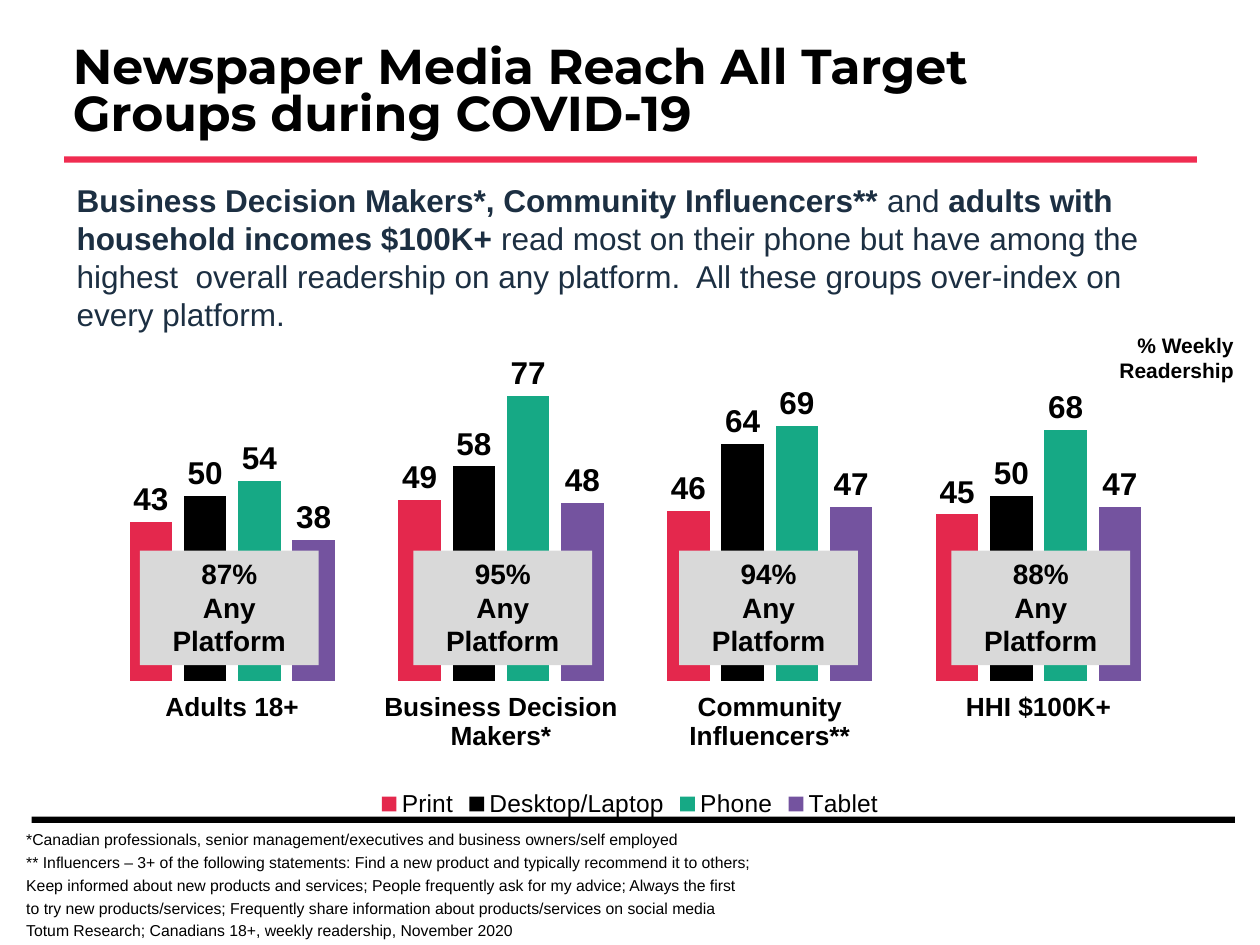
from dataclasses import dataclass

from lxml import etree
from pptx import Presentation
from pptx import util as u
from pptx.chart import data as chart_data
from pptx.dml import color
from pptx.enum import chart as charts
from pptx.enum import shapes, text
from pptx.oxml import ns


@dataclass(frozen=True)
class Theme:
    """Colours, fonts and type sizes of the slide."""
    black: str = "000000"
    navy: str = "1C2F42"
    red: str = "F02C51"
    grey: str = "D9D9D9"
    heading: str = "Montserrat"
    body: str = "Arial"
    title: int = 28
    lead: int = 18
    badge: int = 16
    category: int = 15
    legend: int = 14
    unit: int = 12
    note: int = 9


@dataclass(frozen=True)
class Area:
    """A rectangle in points."""
    left: float
    top: float
    width: float
    height: float

    def lengths(self) -> list:
        """Give the rectangle as slide lengths."""
        return [u.Pt(v) for v in (self.left, self.top, self.width, self.height)]


@dataclass(frozen=True)
class Series:
    """One platform with its readership in each group."""
    name: str
    fill: str
    values: tuple


@dataclass(frozen=True)
class Badge:
    """Reach on any platform, placed over one group."""
    left: float
    reach: str


THEME = Theme()
GROUPS = ("Adults 18+", "Business Decision Makers*", "Community Influencers**", "HHI $100K+")
PLATFORMS = (
    Series("Print", "E4284D", (43, 49, 46, 45)),
    Series("Desktop/Laptop", THEME.black, (50, 58, 64, 50)),
    Series("Phone", "16A985", (54, 77, 69, 68)),
    Series("Tablet", "74539F", (38, 48, 47, 47)),
)
BADGES = (Badge(79.9, "87%"), Badge(236.2, "95%"), Badge(388.1, "94%"), Badge(543.6, "88%"))
RULES = ((Area(18, 466.6, 687.6, 3.6), THEME.black), (Area(36.7, 89.3, 647.3, 3.6), THEME.red))
PLOT = {"xMode": "edge", "yMode": "edge", "x": 0.01, "y": 0.169, "w": 0.99, "h": 0.582}
LEAD = (
    ("Business Decision Makers*, Community Influencers** ", True),
    ("and", False),
    (" adults with household incomes $100K+ ", True),
    ("read most on their phone but have among the highest  overall readership on any platform."
     "  All these groups over-index on every platform.", False),
)
NOTES = (
    "*Canadian professionals, senior management/executives and business owners/self employed",
    "** Influencers – 3+ of the following statements: Find a new product and typically recommend "
    "it to others; Keep informed about new products and services; People frequently ask for my "
    "advice; Always the first to try new products/services; Frequently share information about "
    "products/services on social media",
    "Totum Research; Canadians 18+, weekly readership, November 2020",
)


def style(font, size: int, bold: bool = False, ink: str = THEME.black, face: str = THEME.body) -> None:
    """Format a font."""
    font.size, font.bold, font.name = u.Pt(size), bold, face
    font.color.rgb = color.RGBColor.from_string(ink)


def style_frame(frame, size: int, bold: bool = False, align=text.PP_ALIGN.LEFT) -> None:
    """Format every run of a wrapped, top-anchored frame."""
    frame.word_wrap = True
    frame.auto_size = text.MSO_AUTO_SIZE.SHAPE_TO_FIT_TEXT
    frame.vertical_anchor = text.MSO_ANCHOR.TOP
    for para in frame.paragraphs:
        para.alignment = align
        for span in para.runs:
            style(span.font, size, bold)


def add_block(page, area: Area, fill: str):
    """Draw a plain filled rectangle."""
    box = page.shapes.add_shape(shapes.MSO_SHAPE.RECTANGLE, *area.lengths())
    box.shadow.inherit = False
    box.fill.solid()
    box.fill.fore_color.rgb = color.RGBColor.from_string(fill)
    box.line.fill.background()
    return box


def add_title(page, area: Area, words: str) -> None:
    """Place and format the title placeholder."""
    box = page.shapes.title
    box.left, box.top, box.width, box.height = area.lengths()
    frame = box.text_frame
    frame.text = words
    frame.word_wrap = True
    frame.vertical_anchor = text.MSO_ANCHOR.MIDDLE
    frame.margin_left = frame.margin_right = u.Pt(5)
    frame.margin_top = frame.margin_bottom = u.Pt(2.9)
    para = frame.paragraphs[0]
    para.alignment, para.line_spacing = text.PP_ALIGN.LEFT, 0.8
    style(para.runs[0].font, THEME.title, True, face=THEME.heading)


def add_readership_chart(page, area: Area) -> None:
    """Draw the clustered columns of weekly readership."""
    table = chart_data.CategoryChartData()
    table.categories = GROUPS
    for item in PLATFORMS:
        table.add_series(item.name, item.values)
    kind = charts.XL_CHART_TYPE.COLUMN_CLUSTERED
    chart = page.shapes.add_chart(kind, *area.lengths(), table).chart
    style(chart.font, THEME.lead)
    chart.has_title = False
    chart.has_legend = True
    chart.legend.position = charts.XL_LEGEND_POSITION.BOTTOM
    chart.legend.include_in_layout = False
    style(chart.legend.font, THEME.legend)
    style(chart.category_axis.tick_labels.font, THEME.category, True)
    chart.category_axis.format.line.fill.background()
    axis = chart.value_axis
    axis.minimum_scale, axis.maximum_scale = 0, 90
    axis.has_major_gridlines = axis.visible = False
    plot = chart.plots[0]
    plot.gap_width, plot.overlap, plot.vary_by_categories = 150, -28, False
    for series, item in zip(plot.series, PLATFORMS):
        series.format.fill.solid()
        series.format.fill.fore_color.rgb = color.RGBColor.from_string(item.fill)
        labels = series.data_labels
        labels.show_value = True
        labels.position = charts.XL_LABEL_POSITION.OUTSIDE_END
        style(labels.font, THEME.lead, True)
    set_plot_layout(chart)


def set_plot_layout(chart) -> None:
    """Fix the inner plot area as fractions of the chart."""
    plot_area = chart.element.find(".//" + ns.qn("c:plotArea"))
    for old in plot_area.findall(ns.qn("c:layout")):
        plot_area.remove(old)
    layout = etree.Element(ns.qn("c:layout"))
    plot_area.insert(0, layout)
    manual = etree.SubElement(layout, ns.qn("c:manualLayout"))
    for tag, value in {"layoutTarget": "inner", **PLOT}.items():
        etree.SubElement(manual, ns.qn(f"c:{tag}")).set("val", str(value))


def add_lead(page, area: Area) -> None:
    """Write the lead sentence with its bold groups."""
    frame = page.shapes.add_textbox(*area.lengths()).text_frame
    for words, bold in LEAD:
        span = frame.paragraphs[0].add_run()
        span.text = words
    style_frame(frame, THEME.lead)
    for span, (words, bold) in zip(frame.paragraphs[0].runs, LEAD):
        style(span.font, THEME.lead, bold, THEME.navy)


def add_notes(page, area: Area) -> None:
    """Write the footnotes."""
    frame = page.shapes.add_textbox(*area.lengths()).text_frame
    frame.text = "\n".join(NOTES)
    style_frame(frame, THEME.note)
    for para in frame.paragraphs[1:]:
        para.line_spacing = 1.2


def main() -> None:
    """Build and save the deck."""
    deck = Presentation()
    deck.slide_width, deck.slide_height = u.Pt(720), u.Pt(540)
    page = deck.slides.add_slide(deck.slide_layouts[5])
    for area, fill in RULES:
        add_block(page, area, fill)
    add_title(page, Area(36.7, 1.4, 620.6, 104.4),
              "Newspaper Media Reach All Target Groups during COVID-19")
    add_readership_chart(page, Area(49.7, 144, 620.6, 326.2))
    add_lead(page, Area(36.7, 100.1, 645.8, 94.3))
    add_notes(page, Area(7.9, 470.9, 428.4, 69.1))
    for badge in BADGES:
        box = add_block(page, Area(badge.left, 314.6, 102.2, 65.5), THEME.grey)
        box.text_frame.text = f"{badge.reach}\nAny Platform"
        style_frame(box.text_frame, THEME.badge, True, text.PP_ALIGN.CENTER)
    unit = page.shapes.add_textbox(*Area(614.9, 186.5, 97.2, 36).lengths())
    unit.text_frame.text = "% Weekly Readership"
    style_frame(unit.text_frame, THEME.unit, True, text.PP_ALIGN.RIGHT)
    deck.save("out.pptx")


if __name__ == "__main__":
    main()
